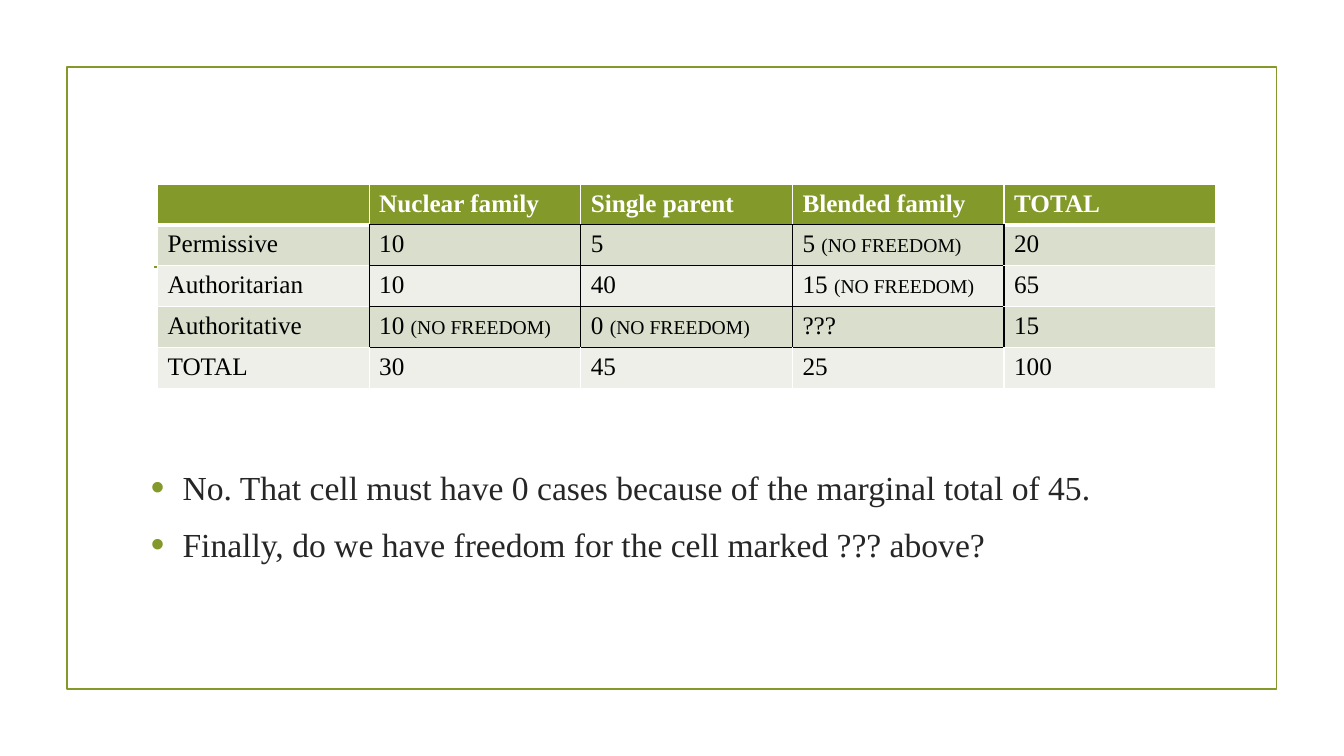
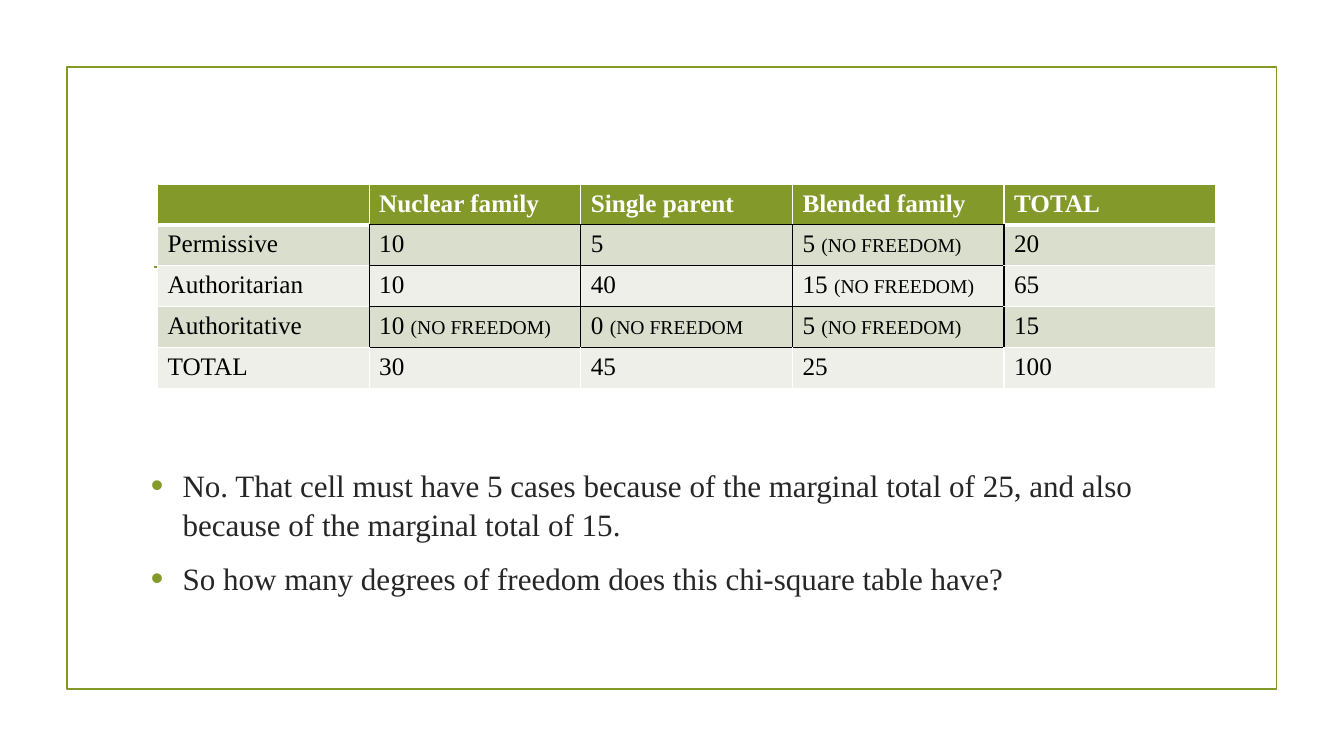
from dataclasses import dataclass

from lxml import etree
from pptx import Presentation
from pptx.dml.color import RGBColor
from pptx.enum import shapes
from pptx.oxml import ns
from pptx.util import Pt

GREEN = RGBColor(0x83, 0x99, 0x2A)
DARK_BAND = RGBColor(0xD9, 0xDE, 0xCD)
LIGHT_BAND = RGBColor(0xED, 0xEF, 0xE8)
INK = RGBColor(0x26, 0x26, 0x26)
BLACK = RGBColor(0, 0, 0)
WHITE = RGBColor(0xFF, 0xFF, 0xFF)
FONT = "Times New Roman"
CELL_SIZE, NOTE_SIZE = 18, 14
COLUMN_WIDTH, HEADER_HEIGHT, ROW_HEIGHT = 151.2, 25.2, 29.2
FIXED = "(NO FREEDOM)"
SIDES = {"L": (0, -1), "R": (0, 1), "T": (-1, 0), "B": (1, 0)}


@dataclass(frozen=True)
class Cell:
    value: str
    note: str = ""


@dataclass(frozen=True)
class FreedomSlide:
    authoritative: tuple[Cell, ...]
    bullets: tuple[str, ...]
    bullet_size: float


HEADER = tuple(map(Cell, ("", "Nuclear family", "Single parent", "Blended family", "TOTAL")))
PERMISSIVE = (Cell("Permissive"), Cell("10"), Cell("5"), Cell("5 ", FIXED), Cell("20"))
AUTHORITARIAN = (Cell("Authoritarian"), Cell("10"), Cell("40"), Cell("15 ", FIXED), Cell("65"))
TOTALS = tuple(map(Cell, ("TOTAL", "30", "45", "25", "100")))

SLIDES = (
    FreedomSlide(
        (Cell("Authoritative"), Cell("10 ", FIXED), Cell("0 ", FIXED), Cell("???"), Cell("15")),
        ("No. That cell must have 0 cases because of the marginal total of 45.",
         "Finally, do we have freedom for the cell marked ??? above?"),
        24,
    ),
    FreedomSlide(
        (Cell("Authoritative"), Cell("10 ", FIXED), Cell("0 ", "(NO FREEDOM"),
         Cell("5 ", FIXED), Cell("15")),
        ("No. That cell must have 5 cases because of the marginal total of 25, "
         "and also because of the marginal total of 15.",
         "So how many degrees of freedom does this chi-square table have?"),
        22.2,
    ),
)


def add_run(p, text: str, size: float, color: RGBColor, bold: bool = False) -> None:
    r = p.add_run()
    r.text = text
    r.font.name, r.font.size, r.font.bold = FONT, Pt(size), bold
    r.font.color.rgb = color


def add_child(parent, tag: str, **attributes: str):
    return etree.SubElement(parent, ns.qn(tag), attributes)


def add_frame(slide) -> None:
    """Draw the green outline and the rule that runs behind the table."""
    sp = slide.shapes.add_shape(shapes.MSO_SHAPE.RECTANGLE, Pt(47.8), Pt(48), Pt(864), Pt(444))
    sp.shadow.inherit = False
    sp.fill.background()
    rule = slide.shapes.add_connector(
        shapes.MSO_CONNECTOR.STRAIGHT, Pt(110), Pt(190.8), Pt(850), Pt(190.8))
    for line in (sp.line, rule.line):
        line.color.rgb = GREEN
        line.width = Pt(1.25)
    add_child(rule._element.spPr, "a:effectLst")


def add_bullets(slide, bullets: tuple[str, ...], size: float) -> None:
    tf = slide.shapes.add_textbox(Pt(100.8), Pt(328.3), Pt(756), Pt(88)).text_frame
    tf.word_wrap = True
    for i, bullet in enumerate(bullets):
        p = tf.add_paragraph() if i else tf.paragraphs[0]
        p.line_spacing = 1.05
        p.space_before = Pt(round(0.2 * size, 1) if i else 0)
        p.space_after = Pt(6)
        pPr = p._p.get_or_add_pPr()
        pPr.set("marL", str(Pt(22.5)))
        pPr.set("indent", str(Pt(-22.5)))
        add_child(add_child(pPr, "a:buClr"), "a:srgbClr", val=str(GREEN))
        add_child(pPr, "a:buSzPct", val="115000")
        add_child(pPr, "a:buFont", typeface="Arial")
        add_child(pPr, "a:buChar", char="•")
        add_run(p, bullet, size, INK)


def is_count(row: int, column: int) -> bool:
    """Tell whether a cell holds a count rather than a label or a total."""
    return 1 <= row <= 3 and 1 <= column <= 3


def set_borders(cell, row: int, column: int) -> None:
    """Outline the counts in black and every other cell in white."""
    tcPr = cell._tc.get_or_add_tcPr()
    for side, (down, across) in SIDES.items():
        black = is_count(row, column) or is_count(row + down, column + across)
        under_header = (row, side) in ((0, "B"), (1, "T"))
        width = 3 if under_header and not black else 1
        ln = add_child(tcPr, f"a:ln{side}", w=str(Pt(width)))
        add_child(add_child(ln, "a:solidFill"), "a:srgbClr", val=str(BLACK if black else WHITE))


def add_counts_table(slide, rows: tuple[tuple[Cell, ...], ...]) -> None:
    height = HEADER_HEIGHT + ROW_HEIGHT * (len(rows) - 1)
    table = slide.shapes.add_table(
        len(rows), len(HEADER), Pt(112.5), Pt(131.8),
        Pt(COLUMN_WIDTH * len(HEADER)), Pt(height)).table
    table.horz_banding = False
    for column in table.columns:
        column.width = Pt(COLUMN_WIDTH)
    for i, row in enumerate(rows):
        table.rows[i].height = Pt(ROW_HEIGHT if i else HEADER_HEIGHT)
        band = GREEN if i == 0 else DARK_BAND if i % 2 else LIGHT_BAND
        color = BLACK if i else WHITE
        for j, content in enumerate(row):
            cell = table.cell(i, j)
            set_borders(cell, i, j)
            cell.fill.solid()
            cell.fill.fore_color.rgb = band
            p = cell.text_frame.paragraphs[0]
            if content.value:
                add_run(p, content.value, CELL_SIZE, color, bold=i == 0)
            if content.note:
                add_run(p, content.note, NOTE_SIZE, color)


def main() -> None:
    prs = Presentation()
    prs.slide_width, prs.slide_height = Pt(960), Pt(540)
    for content in SLIDES:
        slide = prs.slides.add_slide(prs.slide_layouts[6])
        add_frame(slide)
        add_bullets(slide, content.bullets, content.bullet_size)
        add_counts_table(
            slide, (HEADER, PERMISSIVE, AUTHORITARIAN, content.authoritative, TOTALS))
    prs.save("out.pptx")


if __name__ == "__main__":
    main()
